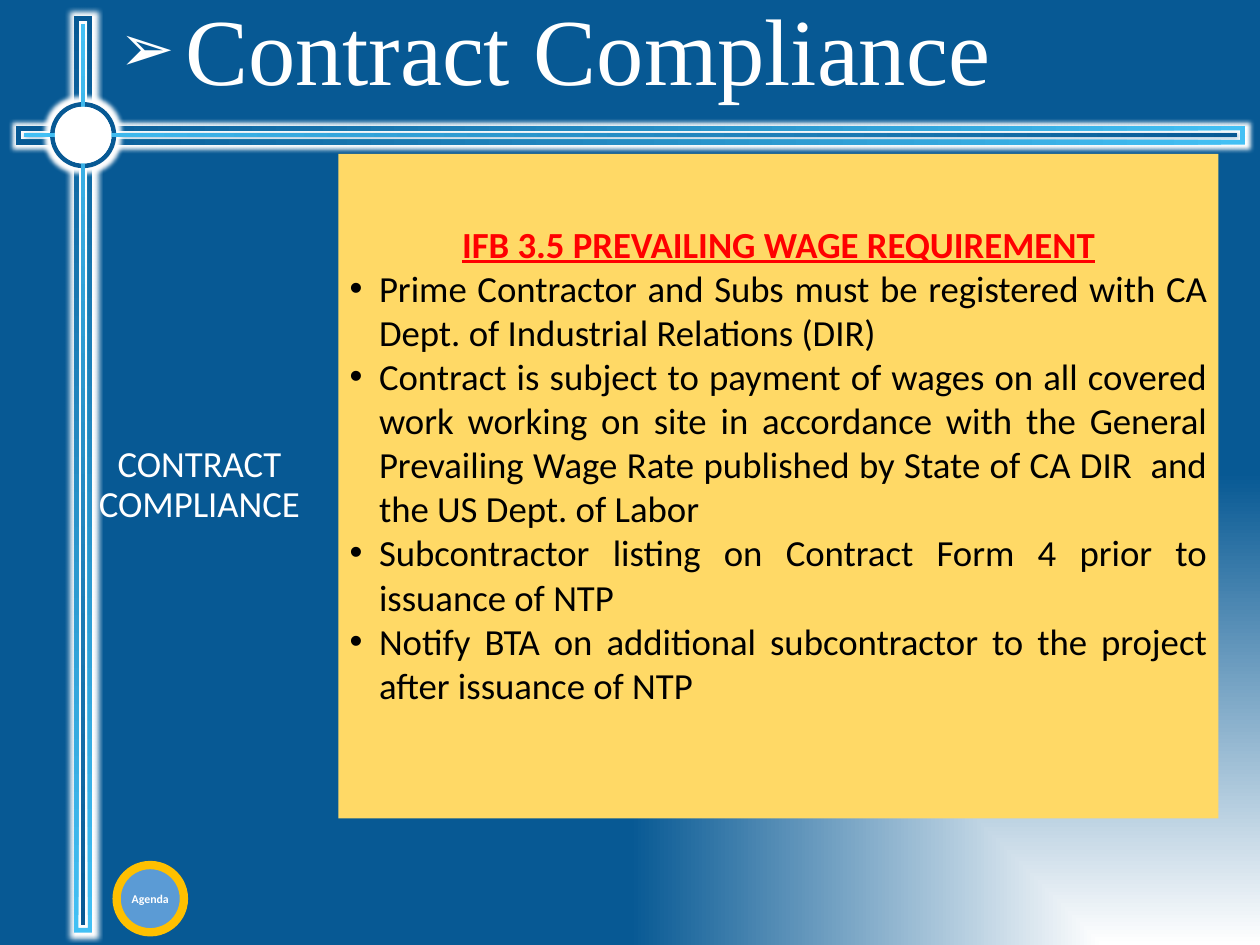
import pptx
import pptx.util
import pptx.dml.color
import pptx.enum.shapes
import pptx.enum.text
import pptx.oxml
import pptx.oxml.ns
import lxml.etree

Inches = pptx.util.Inches
Pt = pptx.util.Pt
SHAPE = pptx.enum.shapes.MSO_SHAPE
ALIGN = pptx.enum.text.PP_ALIGN
MIDDLE = pptx.enum.text.MSO_ANCHOR.MIDDLE

COLORS = {
    "white": "FFFFFF",
    "navy": "075994",
    "sky": "43C0F4",
    "button": "5B9BD5",
    "ring": "FFC000",
    "panel": "FFD966",
    "heading": "FF0000",
    "body": "000000",
}
HEADING = "IFB 3.5 PREVAILING WAGE REQUIREMENT"
REQUIREMENTS = [
    "Prime Contractor and Subs must be registered with CA Dept. of Industrial Relations (DIR)",
    "Contract is subject to payment of wages on all covered work working on site in accordance "
    "with the General Prevailing Wage Rate published by State of CA DIR  and the US Dept. of Labor",
    "Subcontractor listing on Contract Form 4 prior to issuance of NTP",
    "Notify BTA on additional subcontractor to the project after issuance of NTP",
]


def rgb(name):
    return pptx.dml.color.RGBColor.from_string(COLORS[name])


def xml_child(parent, tag, **attributes):
    child = lxml.etree.SubElement(parent, pptx.oxml.ns.qn(tag))
    for key, value in attributes.items():
        child.set(key, str(value))
    return child


def set_gradient(fill, start, end, angle=0):
    fill.gradient()
    fill.gradient_angle = angle
    for stop, name, position in zip(fill.gradient_stops, (start, end), (0, 1)):
        stop.color.rgb = rgb(name)
        stop.position = position


def add_plain(slide, kind, left, top, width, height, color=None, adjustment=None):
    shape = slide.shapes.add_shape(
        kind, Inches(left), Inches(top), Inches(width), Inches(height))
    shape.shadow.inherit = False
    shape.line.fill.background()
    if color:
        shape.fill.solid()
        shape.fill.fore_color.rgb = rgb(color)
    if adjustment is not None:
        shape.adjustments[0] = adjustment
    return shape


def add_glow(shape, radius):
    effects = shape._element.spPr.find(pptx.oxml.ns.qn("a:effectLst"))
    glow = xml_child(effects, "a:glow", rad=Inches(radius))
    xml_child(glow, "a:srgbClr", val=COLORS["white"])


def set_frame(frame, insets):
    frame.word_wrap = True
    frame.vertical_anchor = MIDDLE
    frame.margin_left, frame.margin_top, frame.margin_right, frame.margin_bottom = map(Inches, insets)


def style(paragraph, text, font, size, color, align, bold=False):
    paragraph.text = text
    paragraph.alignment = align
    paragraph.font.name = font
    paragraph.font.size = Pt(size)
    paragraph.font.bold = bold
    paragraph.font.color.rgb = rgb(color)


def set_bullet(paragraph, symbol, indent, percent=100):
    properties = paragraph._p.get_or_add_pPr()
    properties.set("marL", str(Inches(indent)))
    properties.set("indent", str(-Inches(indent)))
    bullet_size = xml_child(properties, "a:buSzPct", val=percent * 1000)
    bullet_font = xml_child(properties, "a:buFont", typeface="Arial")
    bullet = xml_child(properties, "a:buChar", char=symbol)
    defaults = properties.find(pptx.oxml.ns.qn("a:defRPr"))
    for part in (bullet_size, bullet_font, bullet):
        defaults.addprevious(part)


def paint_background(slide):
    fill = slide.background.fill
    set_gradient(fill, "white", "navy")
    gradient = slide.background._cSld.find(".//" + pptx.oxml.ns.qn("a:gradFill"))
    gradient.remove(gradient.find(pptx.oxml.ns.qn("a:lin")))
    corner = xml_child(gradient, "a:path", path="rect")
    xml_child(corner, "a:fillToRect", l=100000, t=100000)
    xml_child(gradient, "a:tileRect", r=-100000, b=-100000)


def add_title(slide, left, top, width, height):
    title = slide.shapes.add_textbox(Inches(left), Inches(top), Inches(width), Inches(height))
    set_frame(title.text_frame, (0.1, 0.05, 0.1, 0.05))
    paragraph = title.text_frame.paragraphs[0]
    style(paragraph, "Contract Compliance", "Times New Roman", 72, "white", ALIGN.LEFT)
    paragraph.line_spacing = 0.9
    set_bullet(paragraph, "➢", 0.69, 70)


def add_cross(slide, left, top, width, height):
    center_x, center_y = left + 0.71, top + 1.26
    beams = [(left, center_y - 0.1, width, 0.2, 180),
             (center_x - 0.1, top, 0.2, height, 90)]
    for x, y, w, h, angle in beams:
        frame = add_plain(slide, SHAPE.FRAME, x, y, w, h, adjustment=0.25)
        set_gradient(frame.fill, "sky", "navy", angle)
        add_glow(frame, 0.1)
    hub = add_plain(slide, SHAPE.DONUT, center_x - 0.35, center_y - 0.35, 0.7, 0.7, "navy", 0.07)
    add_glow(hub, 0.1)
    for x, y, w, h, angle in beams:
        core = add_plain(slide, SHAPE.RECTANGLE, x + 0.08, y + 0.08, w - 0.16, h - 0.16)
        set_gradient(core.fill, "navy", "sky", angle)
    add_plain(slide, SHAPE.OVAL, center_x - 0.3, center_y - 0.3, 0.6, 0.6, "white")


def add_agenda_button(slide, left, top, size):
    button = add_plain(slide, SHAPE.OVAL, left + 0.05, top + 0.05, size - 0.1, size - 0.1, "button")
    set_frame(button.text_frame, (0, 0, 0, 0))
    paragraph = button.text_frame.paragraphs[0]
    style(paragraph, "Agenda", "Calibri", 9, "white", ALIGN.CENTER, True)
    add_plain(slide, SHAPE.DONUT, left, top, size, size, "ring", 0.11)


def add_section_label(slide, left, top, width, height):
    label = slide.shapes.add_textbox(Inches(left), Inches(top), Inches(width), Inches(height))
    set_frame(label.text_frame, (0.22, 0.08, 0.22, 0.08))
    paragraph = label.text_frame.paragraphs[0]
    style(paragraph, "CONTRACT COMPLIANCE", "Calibri", 28, "white", ALIGN.CENTER)
    paragraph.line_spacing = 0.9


def add_requirements(slide, left, top, width, height):
    panel = add_plain(slide, SHAPE.RECTANGLE, left, top, width, height, "panel")
    frame = panel.text_frame
    set_frame(frame, (0.12, 0.12, 0.12, 0.59))
    heading = frame.paragraphs[0]
    style(heading, HEADING, "Calibri", 28, "heading", ALIGN.CENTER, True)
    heading.font.underline = True
    for requirement in REQUIREMENTS:
        paragraph = frame.add_paragraph()
        style(paragraph, requirement, "Calibri", 28, "body", ALIGN.JUSTIFY)
        set_bullet(paragraph, "•", 0.31)


def main():
    deck = pptx.Presentation()
    deck.slide_width, deck.slide_height = Inches(13.33), Inches(10)
    slide = deck.slides.add_slide(deck.slide_layouts[6])
    paint_background(slide)
    add_title(slide, 1.17, 0.08, 12, 1)
    add_cross(slide, 0.17, 0.17, 13, 9.7)
    add_agenda_button(slide, 1.19, 9.11, 0.8)
    add_section_label(slide, 0.8, 1.96, 2.62, 6.35)
    add_requirements(slide, 3.58, 1.63, 9.31, 7.03)
    deck.save("out.pptx")


if __name__ == "__main__":
    main()
